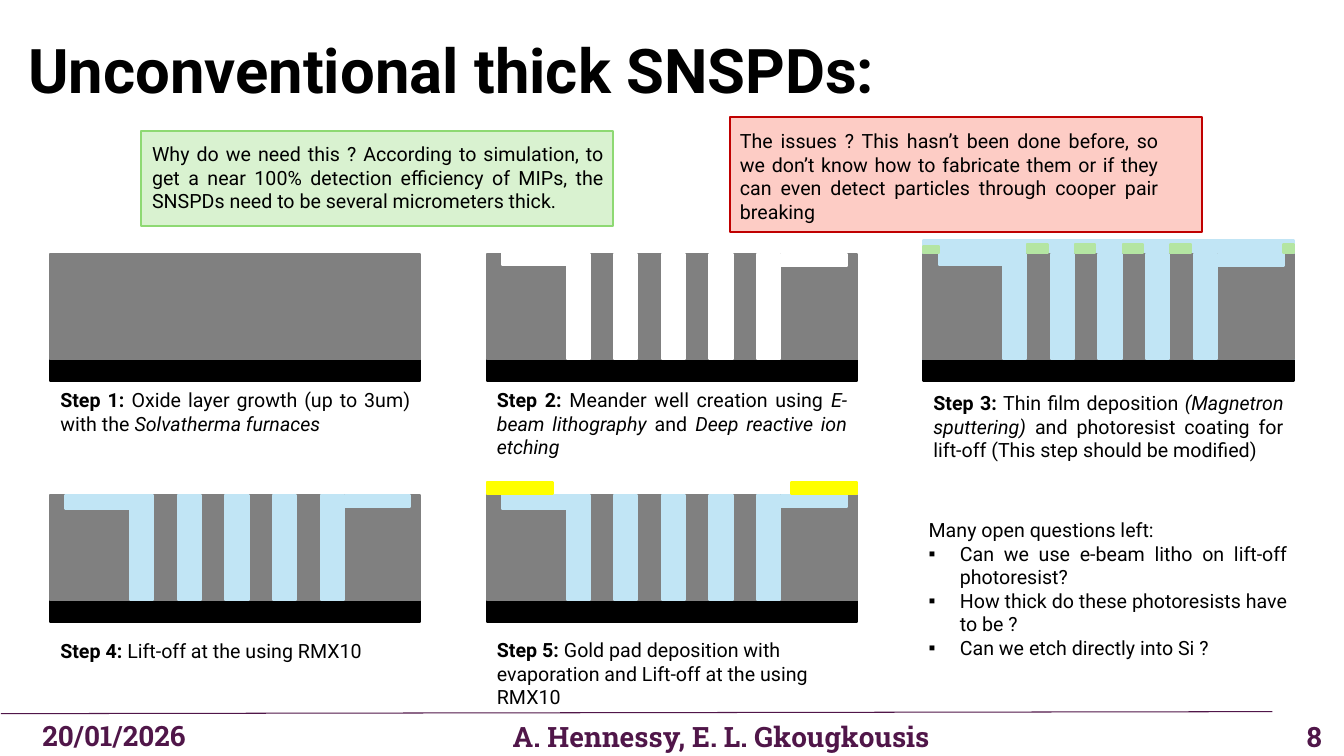
from lxml import etree
from pptx import Presentation
from pptx.dml.color import RGBColor
from pptx.enum.shapes import MSO_CONNECTOR, MSO_SHAPE
from pptx.enum.text import MSO_ANCHOR, MSO_AUTO_SIZE, PP_ALIGN
from pptx.oxml.ns import qn
from pptx.util import Inches, Pt

RECTANGLE, STRAIGHT = MSO_SHAPE.RECTANGLE, MSO_CONNECTOR.STRAIGHT
LEFT, RIGHT, JUSTIFY = PP_ALIGN.LEFT, PP_ALIGN.RIGHT, PP_ALIGN.JUSTIFY
TOP, MIDDLE = MSO_ANCHOR.TOP, MSO_ANCHOR.MIDDLE
GROW, FIXED = MSO_AUTO_SIZE.SHAPE_TO_FIT_TEXT, MSO_AUTO_SIZE.NONE

BLACK, WHITE, PURPLE = "000000", "FFFFFF", "501649"
OXIDE, FILM, RESIST, GOLD = "808080", "C1E5F5", "B4E5A2", "FFFF00"
COLUMNS = [0.5 + 4.33 * column for column in range(3)]
ROWS = [2.52, 4.91]
PANEL_WIDTH = 3.67
BODY = {"name": "Roboto", "size": Pt(14)}
FOOTER = {"name": "Roboto Slab", "size": Pt(20), "bold": True}

deck = Presentation()
deck.slide_width, deck.slide_height = Inches(13.33), Inches(7.5)
page = deck.slides.add_slide(deck.slide_layouts[1])
title, questions = page.placeholders


def add_block(left, top, width, height, fill, line=None):
    block = page.shapes.add_shape(
        RECTANGLE, Inches(left), Inches(top), Inches(width), Inches(height))
    block.shadow.inherit = False
    block.fill.solid()
    block.fill.fore_color.rgb = RGBColor.from_string(fill)
    block.line.color.rgb = RGBColor.from_string(line or fill)
    block.line.width = Pt(1.5)


def write(place, paragraphs, style, align=LEFT, anchor=TOP, size=GROW, color=BLACK, box=None):
    """Fill a box with paragraphs of (text, style flag) spans."""
    box = box or page.shapes.add_textbox(0, 0, 0, 0)
    box.left, box.top, box.width, box.height = map(Inches, place)
    frame = box.text_frame
    frame.word_wrap, frame.auto_size, frame.vertical_anchor = True, size, anchor
    for index, spans in enumerate(paragraphs):
        para = frame.add_paragraph() if index else frame.paragraphs[0]
        para.alignment = align
        for text, flag in spans:
            span = para.add_run()
            span.text = text
            span.font.color.rgb = RGBColor.from_string(color)
            for name, value in {**style, **({flag: True} if flag else {})}.items():
                setattr(span.font, name, value)
    return frame


# Title
heading = write((0.18, 0, 11.5, 1.45), [[("Unconventional thick SNSPDs:", "bold")]],
                {"name": "Roboto", "size": Pt(44)}, anchor=MIDDLE, size=FIXED, box=title)
heading.paragraphs[0].line_spacing = 0.9

# Callouts: frame, text place, fill, line, text
callouts = [
    ((1.4, 1.3, 4.68, 0.94), (1.41, 1.36, 4.68, 0.81), "D9F2D0", "8ED973",
     "Why do we need this ? According to simulation, to get a near 100% detection "
     "efficiency of MIPs, the SNSPDs need to be several micrometers thick."),
    ((7.24, 1.16, 4.68, 1.14), (7.24, 1.23, 4.35, 1.04), "FDCCC5", "C00000",
     "The issues ? This hasn’t been done before, so we don’t know how to fabricate "
     "them or if they can even detect particles through cooper pair breaking"),
]
for frame_place, text_place, fill, line, text in callouts:
    add_block(*frame_place, fill, line)
    write(text_place, [[(text, None)]], BODY, JUSTIFY)

# Film over the third wafer, seen behind it
add_block(COLUMNS[2], ROWS[0] - 0.14, PANEL_WIDTH, 1.2, FILM)

# Wafer cross-sections: column, row, well colour, rise and height of the left pad
wafers = [
    (0, 0, None, 0, 0),
    (1, 0, WHITE, 0.1, 0.21),
    (2, 0, FILM, 0.1, 0.21),
    (0, 1, FILM, 0, 0.14),
    (1, 1, FILM, 0, 0.14),
]
for column, row, well, rise, pad_height in wafers:
    left, top = COLUMNS[column], ROWS[row]
    add_block(left, top + 1.05, PANEL_WIDTH, 0.21, BLACK)
    add_block(left, top, PANEL_WIDTH, 1.04, OXIDE)
    if well:
        for index in range(5):
            add_block(left + 0.79 + 1.89 / 4 * index, top, 0.23, 1.04, well)
        add_block(left + 2.92, top, 0.65, 0.12, well)
        add_block(left + 0.15, top - rise, 0.64, pad_height, well)

# Photoresist on step 3
left, top = COLUMNS[2], ROWS[0] - 0.1
add_block(left, top + 0.02, 0.15, 0.07, RESIST)
for index in range(4):
    add_block(left + 1.03 + 1.42 / 3 * index, top, 0.2, 0.09, RESIST)
add_block(left + 3.57, top, 0.1, 0.09, RESIST)

# Gold pads on step 5
for offset in (0, PANEL_WIDTH - 0.65):
    add_block(COLUMNS[1] + offset, ROWS[1] - 0.13, 0.65, 0.12, GOLD)

# Step captions: column, top, height, alignment, spans after the step label
captions = [
    (0, 3.8, 0.57, JUSTIFY, [("Oxide layer growth (up to 3um) with the ", None),
                             ("Solvatherma furnaces", "italic")]),
    (1, 3.8, 0.81, JUSTIFY, [("Meander well creation using ", None),
                             ("E-beam lithography", "italic"), (" and ", None),
                             ("Deep reactive ion etching", "italic")]),
    (2, 3.83, 0.81, JUSTIFY, [("Thin film deposition ", None),
                              ("(Magnetron sputtering)", "italic"),
                              (" and photoresist coating for lift-off "
                               "(This step should be modified)", None)]),
    (0, 6.29, 0.34, LEFT, [("Lift-off at the using RMX10", None)]),
    (1, 6.28, 0.81, LEFT, [("Gold pad deposition with evaporation and "
                            "Lift-off at the using RMX10", None)]),
]
for number, (column, top, height, align, spans) in enumerate(captions, 1):
    write((COLUMNS[column], top, PANEL_WIDTH, height),
          [[(f"Step {number}: ", "bold"), *spans]], BODY, align)

# Open questions
lines = ["Many open questions left:",
         "Can we use e-beam litho on lift-off photoresist?",
         "How thick do these photoresists have to be ?",
         "Can we etch directly into Si ?"]
listing = write((9.11, 5.09, 3.76, 1.51), [[(line, None)] for line in lines],
                BODY, JUSTIFY, box=questions)
for index, para in enumerate(listing.paragraphs):
    properties = para._p.get_or_add_pPr()
    indent = Inches(0.31) if index else 0
    properties.set("marL", str(indent))
    properties.set("indent", str(-indent))
    if index:
        etree.SubElement(properties, qn("a:buChar")).set("char", "▪")
    else:
        etree.SubElement(properties, qn("a:buNone"))
    para.space_before = Pt(0)

# Footer
rule = page.shapes.add_connector(
    STRAIGHT, Inches(12.62), Inches(7.06), Inches(0.01), Inches(7.08))
rule.line.color.rgb = RGBColor.from_string(PURPLE)
rule.line.width = Pt(0.75)
etree.SubElement(rule._element.spPr, qn("a:effectLst"))
footers = [
    ((12.56, 7.14, 0.65, 0.32), "8"),
    ((0, 7.15, 1.94, 0.28), "20/01/2026"),
    ((4.02, 7.11, 5.3, 0.39), "A. Hennessy, E. L. Gkougkousis"),
]
for place, text in footers:
    write(place, [[(text, None)]], FOOTER, RIGHT, MIDDLE, FIXED, PURPLE)

deck.save("out.pptx")
